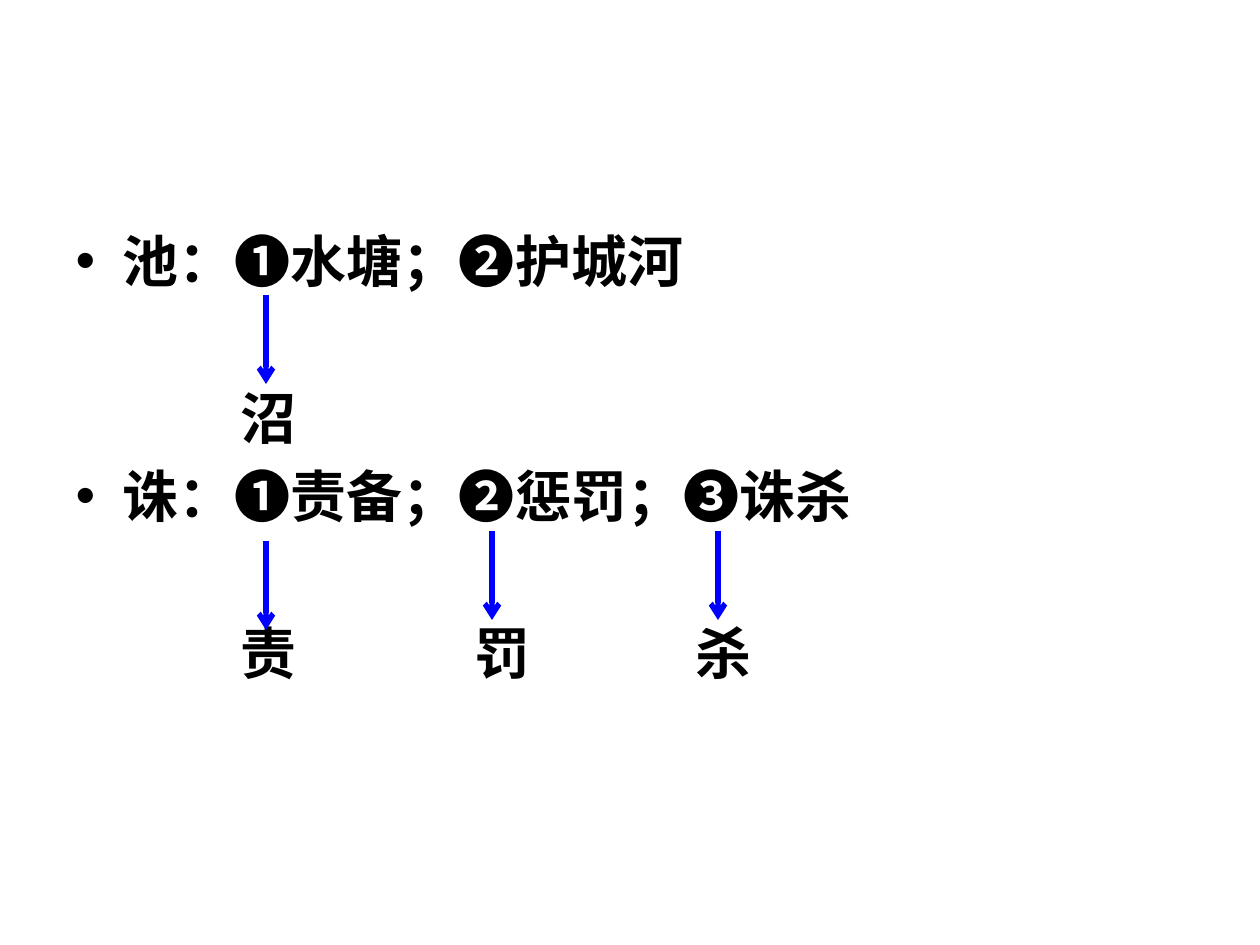
"""Build a slide linking the senses of two Chinese characters to words."""
from lxml import etree
from pptx import Presentation
from pptx import util as u
from pptx.dml.color import RGBColor
from pptx.enum import shapes, text
from pptx.oxml.ns import qn

SCALE = 914400 / 126


def px(length):
    return u.Emu(round(length * SCALE))


def write(paragraph, wording, space):
    paragraph.text = wording
    paragraph.font.name = "Calibri"
    paragraph.font.size = u.Pt(32)
    paragraph.font.bold = True
    paragraph.font.color.rgb = RGBColor.from_string("000000")
    paragraph.line_spacing = u.Pt(39)
    paragraph.space_before = u.Pt(space)


presentation = Presentation()
presentation.slide_width, presentation.slide_height = px(1260), px(945)
slide = presentation.slides.add_slide(presentation.slide_layouts[1])
title = slide.shapes.title
title.element.getparent().remove(title.element)

body = slide.placeholders[1]
body.left, body.top, body.width, body.height = px(63), px(219), px(1134), px(624)
frame = body.text_frame
frame.word_wrap = True
frame.auto_size = text.MSO_AUTO_SIZE.NONE

LINE_GAP, ARROW_GAP = 5.8, 50.6
lines = [
    ("池：❶水塘；❷护城河", True),
    ("沼", False),
    ("诛：❶责备；❷惩罚；❸诛杀", True),
    ("责", False),
]
for index, (wording, bulleted) in enumerate(lines):
    paragraph = frame.add_paragraph() if index else frame.paragraphs[0]
    write(paragraph, wording, LINE_GAP if bulleted else ARROW_GAP)
    if not bulleted:
        properties = paragraph._p.get_or_add_pPr()
        properties.set("marL", str(px(165)))
        properties.set("indent", "0")
        properties.find(qn("a:defRPr")).addprevious(etree.Element(qn("a:buNone")))

for wording, x in [("罚", 462), ("杀", 683)]:
    box = slide.shapes.add_textbox(px(x), px(611), px(90), px(88))
    box.text_frame.word_wrap = True
    write(box.text_frame.paragraphs[0], wording, LINE_GAP)

ARROW_LENGTH = 89
for x, y in [(266, 295), (266, 541), (492, 531), (718, 531)]:
    arrow = slide.shapes.add_connector(
        shapes.MSO_CONNECTOR.STRAIGHT, px(x), px(y), px(x), px(y + ARROW_LENGTH))
    arrow.line.color.rgb = RGBColor.from_string("0000FF")
    arrow.line.width = u.Pt(3)
    etree.SubElement(arrow.line._get_or_add_ln(), qn("a:tailEnd"), type="arrow")
    etree.SubElement(arrow._element.spPr, qn("a:effectLst"))

presentation.save("out.pptx")
